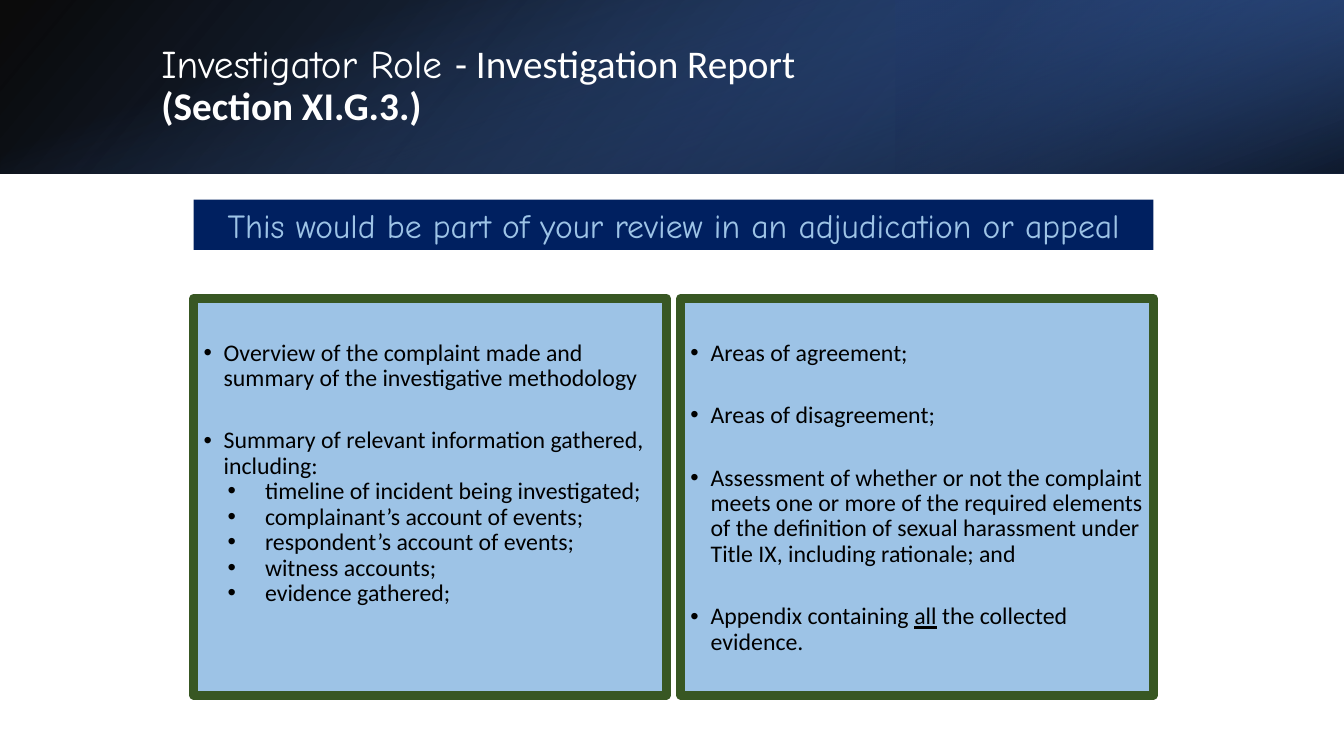
"""Build the Investigation Report slide with its banner and two report panels."""
from lxml import etree
from pptx import Presentation
from pptx import util as u
from pptx.dml.color import RGBColor
from pptx.enum import shapes, text
from pptx.oxml.ns import qn

COLOURS = {
    "black": "000000", "white": "FFFFFF", "header": "2F5597",
    "deep": "203864", "accent": "4472C4", "panel": "9DC3E6",
    "border": "385723", "banner": "002060",
}
BODY_FONT, DISPLAY_FONT = "Calibri", "Comic Neue"
MAIN, SUB = 0, 1
MARGINS = {MAIN: (0.2, -0.2), SUB: (0.61, -0.37)}

OVERVIEW = [
    (MAIN, ["Overview of the complaint made and summary of the investigative methodology"]),
    (MAIN, ["Summary of relevant information gathered, including:"]),
    (SUB, ["timeline of incident being investigated;"]),
    (SUB, ["complainant’s account of events;"]),
    (SUB, ["respondent’s account of events;"]),
    (SUB, ["witness accounts;"]),
    (SUB, ["evidence gathered;"]),
]
FINDINGS = [
    (MAIN, ["Areas of agreement;"]),
    (MAIN, ["Areas of disagreement;"]),
    (MAIN, ["Assessment of whether or not the complaint meets one or more of the required "
            "elements of the definition of sexual harassment under Title IX, including "
            "rationale; and"]),
    (MAIN, ["Appendix containing ", "all", " the collected evidence."]),
]


def rgb(name):
    """Return the named colour."""
    return RGBColor.from_string(COLOURS[name])


def add_text(paragraph, words, size, colour, font=BODY_FONT, bold=False, underline=False):
    """Add one formatted run to a paragraph."""
    run = paragraph.add_run()
    run.text = words
    run.font.name, run.font.size = font, u.Pt(size)
    run.font.bold, run.font.underline = bold, underline
    run.font.color.rgb = rgb(colour)


def add_rectangle(slide, left, top, width, height, fill=None):
    """Add a rectangle without shadow or outline."""
    shape = slide.shapes.add_shape(
        shapes.MSO_SHAPE.RECTANGLE, *map(u.Inches, (left, top, width, height)))
    shape.shadow.inherit = False
    shape.line.fill.background()
    if fill:
        shape.fill.solid()
        shape.fill.fore_color.rgb = rgb(fill)
    return shape


def add_gradient(slide, box, stops, angle, rotation=0, flip=False):
    """Add a rectangle with a translucent linear gradient."""
    shape = add_rectangle(slide, *box)
    shape.rotation = rotation
    properties = shape._element.spPr
    if flip:
        properties.find(qn("a:xfrm")).set("flipH", "1")
    gradient = etree.Element(qn("a:gradFill"), rotWithShape="1")
    stop_list = etree.SubElement(gradient, qn("a:gsLst"))
    for position, colour, opacity in stops:
        stop = etree.SubElement(stop_list, qn("a:gs"), pos=str(position * 1000))
        value = etree.SubElement(stop, qn("a:srgbClr"), val=COLOURS[colour])
        etree.SubElement(value, qn("a:alpha"), val=str(opacity * 1000))
    etree.SubElement(gradient, qn("a:lin"), ang=str(angle * 60000), scaled="0")
    properties.find(qn("a:prstGeom")).addnext(gradient)


def add_header(slide, width, height):
    """Layer the three gradients of the header band."""
    add_gradient(slide, (0, 0, width, height),
                 [(0, "black", 96), (100, "header", 100)], 140, flip=True)
    add_gradient(slide, (width * 2 / 3, 0, width / 3, height),
                 [(19, "deep", 68), (100, "accent", 79)], 320, rotation=180, flip=True)
    offset = (width - height) / 2
    add_gradient(slide, (offset, -offset, height, width),
                 [(23, "accent", 0), (99, "black", 74)], 340, rotation=90)


def format_title(slide):
    """Place the title above the header band and fill it."""
    title = slide.shapes.title
    slide.shapes._spTree.append(title._element)
    title.left, title.top = u.Inches(1.5), u.Inches(0.38)
    title.width, title.height = u.Inches(10.98), u.Inches(0.96)
    title.text_frame.vertical_anchor = text.MSO_ANCHOR.MIDDLE
    paragraph = title.text_frame.paragraphs[0]
    paragraph.alignment = text.PP_ALIGN.LEFT
    paragraph.line_spacing = 0.9
    add_text(paragraph, "Investigator Role ", 28, "white", font=DISPLAY_FONT)
    add_text(paragraph, "- Investigation Report", 28, "white")
    paragraph.add_line_break()
    add_text(paragraph, "(Section XI.G.3.)", 28, "white", bold=True)


def add_bullet(paragraph, level):
    """Give a paragraph a hanging round bullet."""
    paragraph.level = level
    properties = paragraph._p.get_or_add_pPr()
    margin, indent = MARGINS[level]
    properties.set("marL", str(u.Inches(margin)))
    properties.set("indent", str(u.Inches(indent)))
    colour = etree.SubElement(properties, qn("a:buClr"))
    etree.SubElement(colour, qn("a:srgbClr"), val=COLOURS["black"])
    etree.SubElement(properties, qn("a:buFont"), typeface="Arial")
    etree.SubElement(properties, qn("a:buChar"), char="•")


def add_panel(slide, left, items):
    """Add a bordered panel holding a bulleted list."""
    panel = add_rectangle(slide, left, 2.96, 4.69, 3.94, "panel")
    panel.line.color.rgb = rgb("border")
    panel.line.width = u.Pt(6)
    etree.SubElement(panel.line._get_or_add_ln(), qn("a:round"))
    frame = panel.text_frame
    frame.word_wrap = True
    frame.vertical_anchor = text.MSO_ANCHOR.TOP
    frame.margin_top = u.Inches(0.42)
    for index, (level, parts) in enumerate(items):
        paragraph = frame.add_paragraph() if index else frame.paragraphs[0]
        add_bullet(paragraph, level)
        paragraph.alignment = text.PP_ALIGN.LEFT
        paragraph.line_spacing = 0.89
        paragraph.space_before = u.Pt(26.5 if index and level == MAIN else 0)
        for part in parts:
            add_text(paragraph, part, 17, "black", underline=part == "all")


def add_banner(slide):
    """Add the banner that links the report to the review."""
    banner = add_rectangle(slide, 1.92, 1.98, 9.52, 0.5, "banner")
    frame = banner.text_frame
    frame.word_wrap = True
    frame.vertical_anchor = text.MSO_ANCHOR.TOP
    paragraph = frame.paragraphs[0]
    paragraph.alignment = text.PP_ALIGN.CENTER
    add_text(paragraph, "This would be part of your review in an adjudication or appeal",
             24, "panel", font=DISPLAY_FONT)


def main():
    """Build and save the slide."""
    presentation = Presentation()
    presentation.slide_width, presentation.slide_height = u.Inches(13.33), u.Inches(7.5)
    slide = presentation.slides.add_slide(presentation.slide_layouts[5])
    add_header(slide, 13.33, 1.72)
    format_title(slide)
    add_panel(slide, 1.92, OVERVIEW)
    add_panel(slide, 6.75, FINDINGS)
    add_banner(slide)
    presentation.save("out.pptx")


if __name__ == "__main__":
    main()
